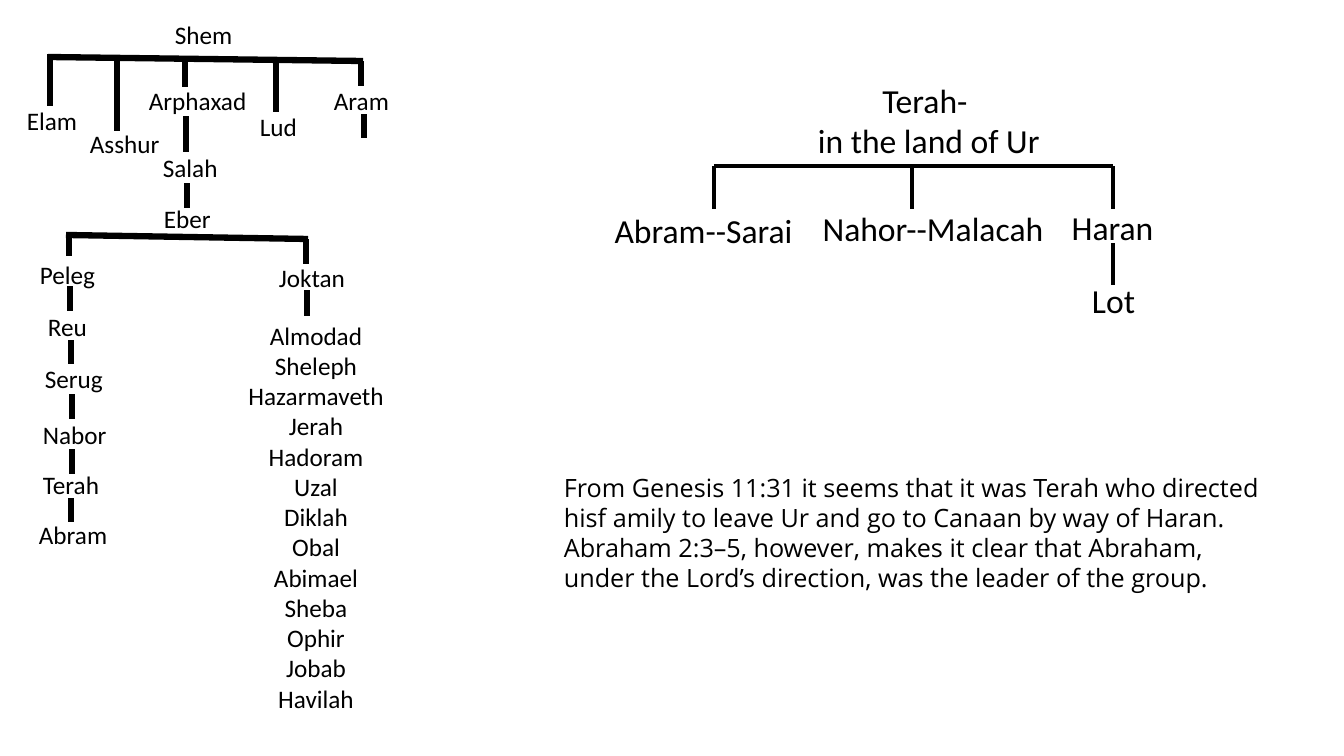
from dataclasses import dataclass

from lxml import etree
from pptx import Presentation
from pptx.dml.color import RGBColor
from pptx.enum.shapes import MSO_CONNECTOR
from pptx.enum.text import MSO_AUTO_SIZE, PP_ALIGN
from pptx.oxml.ns import qn
from pptx.util import Pt

STRAIGHT = MSO_CONNECTOR.STRAIGHT
FIT_SHAPE = MSO_AUTO_SIZE.SHAPE_TO_FIT_TEXT
LEFT, CENTER = PP_ALIGN.LEFT, PP_ALIGN.CENTER

SLIDE_W, SLIDE_H = 1344, 756
EMU_PER_PX = 12192000 / SLIDE_W


@dataclass(frozen=True)
class Theme:
    ink: RGBColor = RGBColor(0, 0, 0)
    tree_font: str = "Calibri"
    note_font: str = "Open Sans"
    small: int = 18
    large: int = 24
    thick: float = 4.5
    thin: float = 2.25


THEME = Theme()

# Descendants of Shem: name, left, top, width
NAME_H = 40
SHEM_NAMES = [
    ("Shem", 165, 14, 80),
    ("Elam", 17, 100, 80),
    ("Asshur", 80, 123, 108),
    ("Arphaxad", 139, 80, 135),
    ("Lud", 250, 106, 80),
    ("Aram", 324, 80, 80),
    ("Salah", 153, 147, 80),
    ("Eber", 154, 198, 80),
    ("Peleg", 30, 254, 80),
    ("Joktan", 269, 257, 109),
    ("Reu", 38, 306, 80),
    ("Serug", 35, 358, 80),
    ("Nabor", 33, 414, 116),
    ("Terah", 33, 464, 80),
    ("Abram", 29, 514, 104),
]
JOKTAN_SONS = [
    "Almodad", "Sheleph", "Hazarmaveth", "Jerah", "Hadoram", "Uzal", "Diklah",
    "Obal", "Abimael", "Sheba", "Ophir", "Jobab", "Havilah",
]
JOKTAN_SONS_BOX = (229, 315, 174, 407)

# Sibling bars: x1, y1, x2, y2
SHEM_BARS = [(48, 57, 363, 61), (66, 235, 308, 239)]
# Vertical stems: x, top, bottom
SHEM_STEMS = [
    (50, 54, 106), (117, 56, 131), (185, 61, 87), (276, 60, 112), (361, 61, 86),
    (186, 116, 152), (364, 114, 138), (187, 183, 208),
    (69, 237, 256), (306, 239, 264), (307, 290, 316),
    (70, 286, 311), (71, 340, 364), (72, 394, 419), (72, 449, 474), (71, 498, 522),
]

# Family of Terah: lines, left, top, width, height
TERAH_NAMES = [
    (["Terah-", " in the land of Ur"], 758, 75, 334, 92),
    (["Abram--Sarai"], 537, 205, 333, 50),
    (["Nahor--Malacah"], 808, 203, 250, 50),
    (["Haran"], 1033, 202, 159, 50),
    (["Lot"], 1034, 275, 159, 50),
]
TERAH_BARS = [(714, 166, 1113, 166)]
TERAH_STEMS = [(714, 166, 209), (912, 166, 209), (1113, 166, 209), (1113, 243, 285)]

NOTE = (
    "From Genesis 11:31 it seems that it was Terah who directed hisf amily to leave Ur "
    "and go to Canaan by way of Haran. Abraham 2:3–5, however, makes it clear that "
    "Abraham, under the Lord’s direction, was the leader of the group."
)
NOTE_BOX = (554, 467, 718, 132)


def emu(*lengths):
    return [round(length * EMU_PER_PX) for length in lengths]


def add_text(slide, lines, box, size, font=THEME.tree_font, align=LEFT):
    frame = slide.shapes.add_textbox(*emu(*box)).text_frame
    frame.word_wrap = True
    frame.auto_size = FIT_SHAPE
    frame.text = "\n".join(lines)
    for paragraph in frame.paragraphs:
        paragraph.alignment = align
        paragraph.font.name = font
        paragraph.font.size = Pt(size)
        paragraph.font.color.rgb = THEME.ink


def add_branches(slide, bars, stems, weight):
    for ends in bars + [(x, bottom, x, top) for x, top, bottom in stems]:
        branch = slide.shapes.add_connector(STRAIGHT, *emu(*ends))
        branch.line.color.rgb = THEME.ink
        branch.line.width = Pt(weight)
        etree.SubElement(branch._element.spPr, qn("a:effectLst"))


def main():
    deck = Presentation()
    deck.slide_width, deck.slide_height = emu(SLIDE_W, SLIDE_H)
    slide = deck.slides.add_slide(deck.slide_layouts[6])

    # Line of Shem
    add_branches(slide, SHEM_BARS, SHEM_STEMS, THEME.thick)
    for name, left, top, width in SHEM_NAMES:
        add_text(slide, [name], (left, top, width, NAME_H), THEME.small)
    add_text(slide, JOKTAN_SONS, JOKTAN_SONS_BOX, THEME.small, align=CENTER)

    # Family of Terah
    add_branches(slide, TERAH_BARS, TERAH_STEMS, THEME.thin)
    for lines, *box in TERAH_NAMES:
        add_text(slide, lines, box, THEME.large, align=CENTER)

    # Note on the journey
    add_text(slide, [NOTE], NOTE_BOX, THEME.small, font=THEME.note_font)

    deck.save("out.pptx")


if __name__ == "__main__":
    main()
